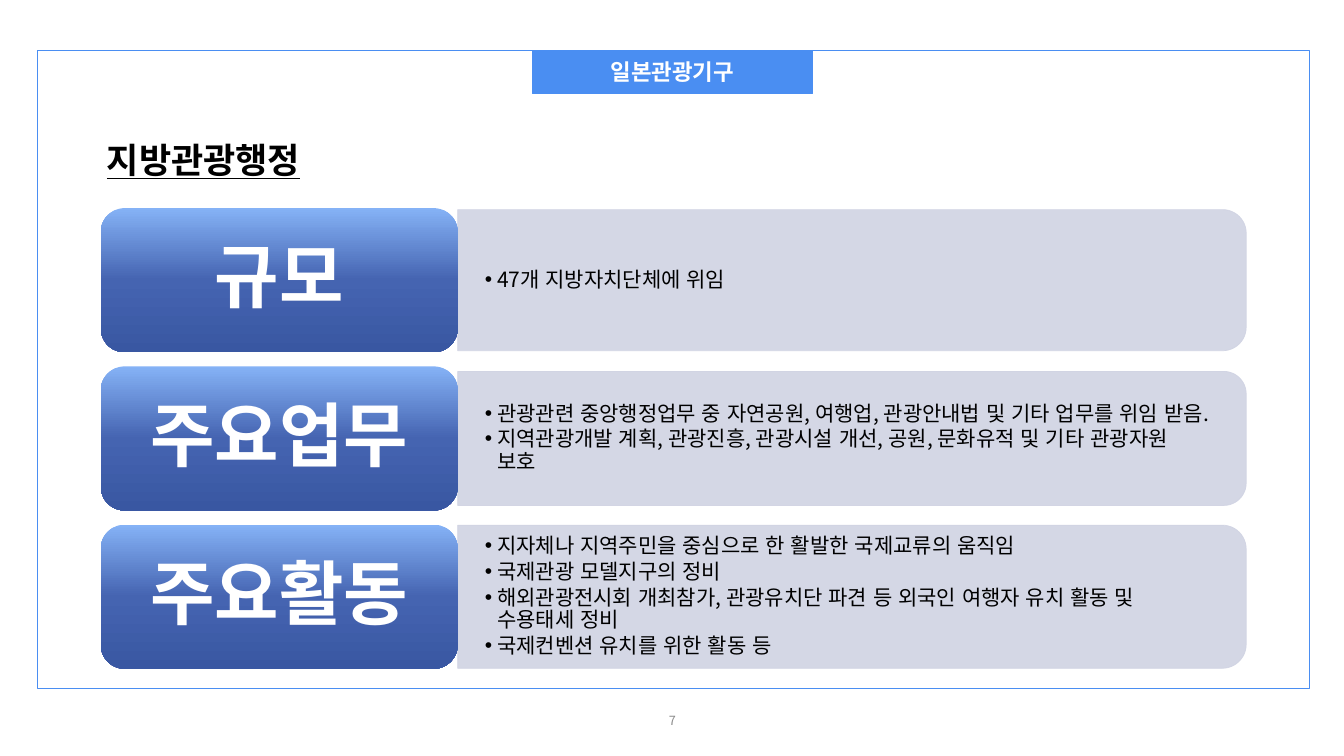
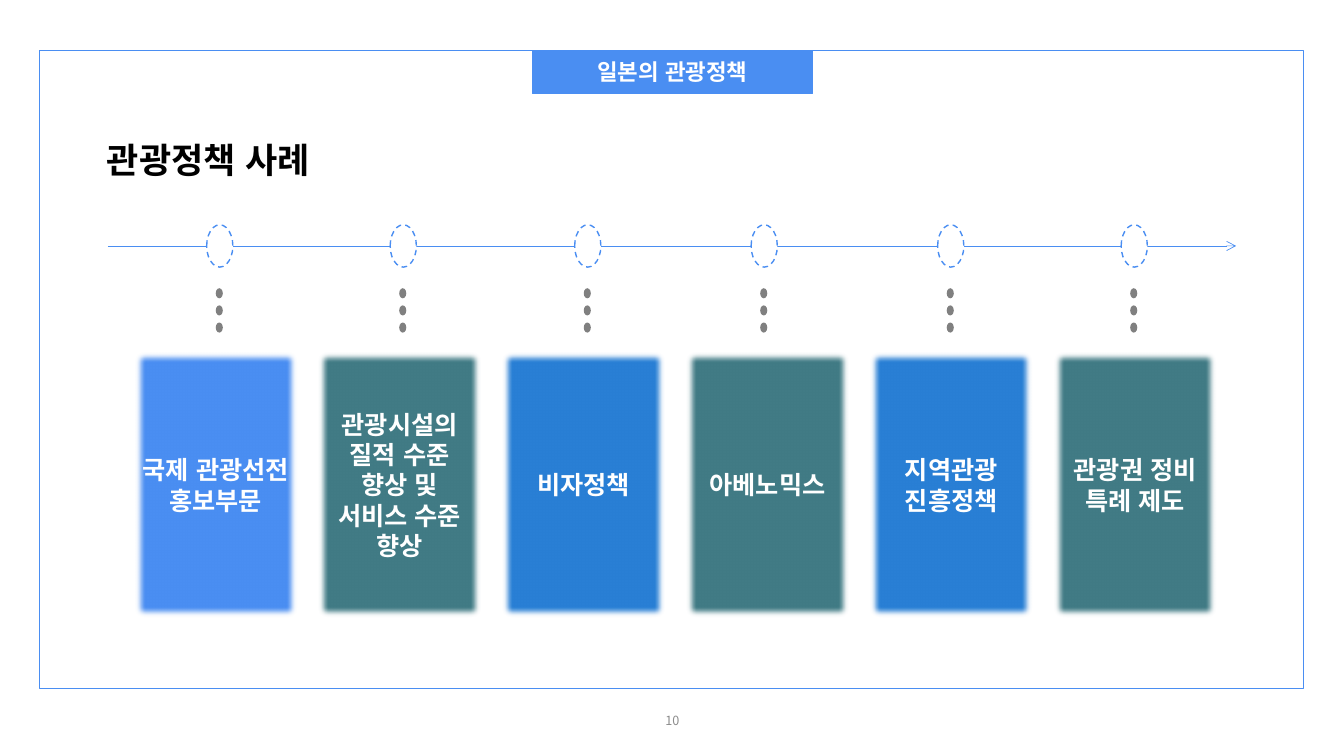
"""Two slides on Japanese tourism administration and policy."""
from copy import deepcopy

from lxml import etree
from pptx import Presentation
from pptx.dml.color import RGBColor
from pptx.enum.dml import MSO_LINE
from pptx.enum.lang import MSO_LANGUAGE_ID
from pptx.enum.shapes import MSO_CONNECTOR, MSO_SHAPE
from pptx.enum.text import MSO_ANCHOR, MSO_AUTO_SIZE, PP_ALIGN
from pptx.oxml.ns import qn
from pptx.util import Inches, Pt

RECT, ELLIPSE = MSO_SHAPE.RECTANGLE, MSO_SHAPE.OVAL
ROUNDED, ROUND_END = MSO_SHAPE.ROUNDED_RECTANGLE, MSO_SHAPE.ROUND_2_SAME_RECTANGLE
STRAIGHT, DASH = MSO_CONNECTOR.STRAIGHT, MSO_LINE.DASH
LEFT, CENTER, JUSTIFY = PP_ALIGN.LEFT, PP_ALIGN.CENTER, PP_ALIGN.JUSTIFY
TOP, MIDDLE = MSO_ANCHOR.TOP, MSO_ANCHOR.MIDDLE
NO_FIT, KOREAN = MSO_AUTO_SIZE.NONE, MSO_LANGUAGE_ID.KOREAN

FONT = "Noto Sans CJK KR"
COLORS = {
    "accent": "4A8EF2", "blue": "297FD5", "teal": "417B85", "panel": "D0D3E3",
    "white": "FFFFFF", "black": "000000", "dot": "808080", "number": "8C8C8C",
}
LABEL_GRADIENT = [(0, "85B2F6"), (0.5, "4564B1"), (1, "3957A2")]

ADMINISTRATION = {
    "tag": "일본관광기구", "title": "지방관광행정", "number": "7",
    "underline": True, "frame": (0.37, 12.62), "layout": 4,
}
DUTIES = [
    ("규모", 1.4, ["47개 지방자치단체에 위임"]),
    ("주요업무", 1.33, [
        "관광관련 중앙행정업무 중 자연공원, 여행업, 관광안내법 및 기타 업무를 위임 받음.",
        "지역관광개발 계획, 관광진흥, 관광시설 개선, 공원, 문화유적 및 기타 관광자원 보호",
    ]),
    ("주요활동", 1.42, [
        "지자체나 지역주민을 중심으로 한 활발한 국제교류의 움직임",
        "국제관광 모델지구의 정비",
        "해외관광전시회 개최참가, 관광유치단 파견 등 외국인 여행자 유치 활동 및 수용태세 정비",
        "국제컨벤션 유치를 위한 활동 등",
    ]),
]
LIST_SLOTS = (1, 2, 4)

POLICY = {
    "tag": "일본의 관광정책", "title": "관광정책 사례", "number": "10",
    "underline": False, "frame": (0.39, 12.54), "layout": 5,
}
CASES = [
    ("국제 관광선전 홍보부문", "accent", 2.18),
    ("관광시설의 질적 수준 향상 및 서비스 수준 향상", "teal", 4.0),
    ("비자정책", "blue", 5.83),
    ("아베노믹스", "teal", 7.58),
    ("지역관광 진흥정책", "blue", 9.43),
    ("관광권 정비 특례 제도", "teal", 11.25),
]


def rgb(name):
    return RGBColor.from_string(COLORS[name])


def write(holder, *lines, size, color="black", bold=False, underline=False,
          align=CENTER, anchor=MIDDLE, inset=(0.1, 0.05), spacing=1.0,
          after=0, bullet=None):
    """Fill a shape's text frame, one paragraph per line."""
    frame = holder.text_frame
    frame.word_wrap, frame.auto_size = True, NO_FIT
    frame.vertical_anchor = anchor
    frame.margin_left = frame.margin_right = Inches(inset[0])
    frame.margin_top = frame.margin_bottom = Inches(inset[1])
    for index, line in enumerate(lines):
        paragraph = frame.add_paragraph() if index else frame.paragraphs[0]
        paragraph.alignment, paragraph.line_spacing = align, spacing
        paragraph.space_before, paragraph.space_after = Pt(0), Pt(after)
        if bullet:
            props = paragraph._p.get_or_add_pPr()
            props.set("marL", str(Inches(0.12)))
            props.set("indent", str(-Inches(0.12)))
            etree.SubElement(props, qn("a:buChar"), char=bullet)
        run = paragraph.add_run()
        run.text = line
        font = run.font
        font.name, font.size, font.language_id = FONT, Pt(size), KOREAN
        font.bold, font.underline = bold, underline
        font.color.rgb = rgb(color)
        etree.SubElement(run._r.get_or_add_rPr(), qn("a:ea"), typeface=FONT)


def place(holder, left, top, width, height):
    holder.left, holder.top = Inches(left), Inches(top)
    holder.width, holder.height = Inches(width), Inches(height)


def draw(slide, kind, left, top, width, height, fill=None, line=None, weight=1):
    shape = slide.shapes.add_shape(
        kind, Inches(left), Inches(top), Inches(width), Inches(height))
    shape.shadow.inherit = False
    if fill:
        shape.fill.solid()
        shape.fill.fore_color.rgb = rgb(fill)
    else:
        shape.fill.background()
    if line:
        shape.line.color.rgb = rgb(line)
        shape.line.width = Pt(weight)
    else:
        shape.line.fill.background()
    return shape


def set_opacity(shape, percent):
    for color in shape._element.spPr.iter(qn("a:srgbClr")):
        etree.SubElement(color, qn("a:alpha"), val=str(percent * 1000))


def soften(shape, radius):
    effects = shape._element.spPr.find(qn("a:effectLst"))
    etree.SubElement(effects, qn("a:softEdge"), rad=str(Inches(radius)))


def shade(shape, stops):
    shape.fill.gradient()
    shape.fill.gradient_angle = 270
    stop_list = shape._element.spPr.find(".//" + qn("a:gsLst"))
    stop_list.append(deepcopy(stop_list[0]))
    for stop, (position, color) in zip(shape.fill.gradient_stops, stops):
        stop.position, stop.color.rgb = position, RGBColor.from_string(color)


def start_slide(deck, page):
    """Add a slide with the shared frame, tag, title and page number."""
    slide = deck.slides.add_slide(deck.slide_layouts[page["layout"]])
    title = slide.shapes.title
    place(title, 0.96, 1.32, 11.71, 0.52)
    write(title, page["title"], size=25, bold=True, align=JUSTIFY, anchor=TOP,
          underline=page["underline"])
    tag = draw(slide, RECT, 5.28, 0.5, 2.78, 0.43, "accent", "accent")
    write(tag, page["tag"], size=16, color="white", bold=True)
    left, width = page["frame"]
    draw(slide, RECT, left, 0.5, width, 6.33, line="accent")
    number = slide.shapes.add_textbox(
        Inches(5.17), Inches(6.95), Inches(3), Inches(0.4))
    write(number, page["number"], size=9, color="number")
    return slide


def build_administration(deck):
    slide = start_slide(deck, ADMINISTRATION)
    lists = {p.placeholder_format.idx: p for p in slide.placeholders}
    label_left, label_width, label_height = 1, 3.54, 1.43
    panel_left, panel_width = label_left + label_width, 7.82
    first_middle, pitch = 2.78, 1.57
    for row, (label, panel_height, points) in enumerate(DUTIES):
        middle = first_middle + row * pitch
        panel = draw(slide, ROUND_END,
                     panel_left + (panel_width - panel_height) / 2,
                     middle - panel_width / 2, panel_height, panel_width,
                     "panel", "panel", 0.5)
        panel.rotation = 90
        set_opacity(panel, 90)
        duties = lists.pop(LIST_SLOTS[row])
        place(duties, panel_left, middle - panel_height / 2 + 0.07,
              7.75, panel_height - 0.14)
        write(duties, *points, size=15, align=LEFT, inset=(0.27, 0.14),
              spacing=0.9, after=2.25, bullet="•")
        slide.shapes._spTree.append(duties._element)
        heading = draw(slide, ROUNDED, label_left, middle - label_height / 2,
                       label_width, label_height)
        shade(heading, LABEL_GRADIENT)
        write(heading, label, size=50, color="white", bold=True,
              inset=(0.21, 0.1), spacing=0.9)
    for index, unused in lists.items():
        if index:
            unused._element.getparent().remove(unused._element)


def build_policy(deck):
    slide = start_slide(deck, POLICY)
    axis = 2.44
    timeline = slide.shapes.add_connector(
        STRAIGHT, Inches(1.07), Inches(axis), Inches(12.26), Inches(axis))
    timeline.line.color.rgb = rgb("accent")
    timeline.line.width = Pt(0.5)
    etree.SubElement(timeline.line._get_or_add_ln(), qn("a:tailEnd"), type="arrow")
    etree.SubElement(timeline._element.spPr, qn("a:effectLst"))
    first_card, last_card = 1.31, 10.43
    pitch = (last_card - first_card) / (len(CASES) - 1)
    for index, (case, color, center) in enumerate(CASES):
        node = draw(slide, ELLIPSE, center - 0.13, axis - 0.21, 0.26, 0.42,
                    "white", "accent")
        node.line.dash_style = DASH
        for step in range(3):
            draw(slide, ELLIPSE, center - 0.04, 2.86 + step * 0.17, 0.07, 0.1, "dot")
        card = draw(slide, RECT, first_card + index * pitch, 3.47, 1.66, 2.68, color)
        soften(card, 0.07)
        write(card, case, size=18, color="white", bold=True, inset=(0.09, 0.05))


def main():
    deck = Presentation()
    deck.slide_width, deck.slide_height = Inches(13.33), Inches(7.5)
    build_administration(deck)
    build_policy(deck)
    deck.save("out.pptx")


if __name__ == "__main__":
    main()
